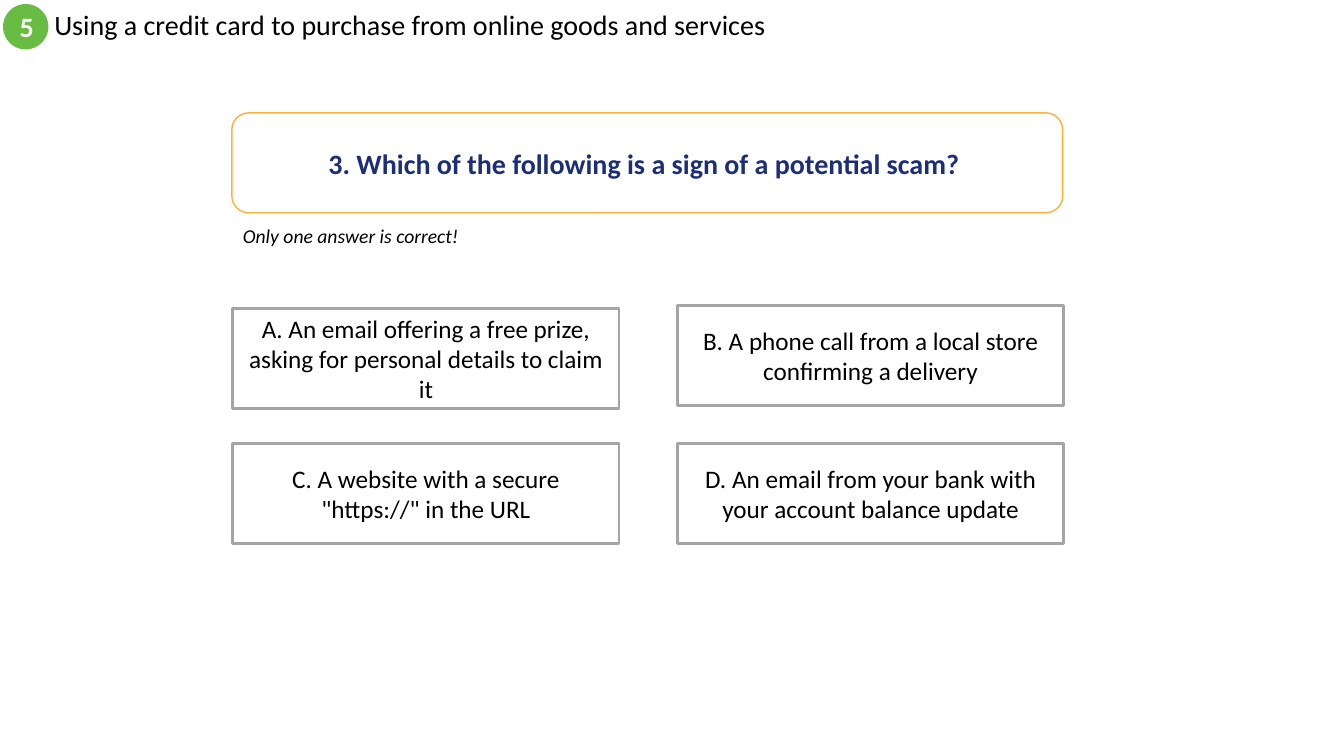
from dataclasses import dataclass

from pptx import Presentation
from pptx import util as u
from pptx.dml.color import RGBColor
from pptx.enum import shapes, text

COLUMNS, ROWS = 1333, 750
CELL = u.Inches(0.01)


@dataclass(frozen=True)
class Theme:
    font: str = "Calibri"
    ink: str = "000000"
    paper: str = "FFFFFF"
    badge: str = "68BC42"
    question: str = "1C2E78"
    question_line: str = "FCB13A"
    answer_line: str = "A5A5A5"
    heading_size: int = 20
    answer_size: int = 18
    hint_size: int = 14


class QuizSlide:
    """Places elements given as (column, row, columns wide, rows high)."""

    def __init__(self, deck, theme):
        self.theme = theme
        self.page = deck.slides.add_slide(deck.slide_layouts[6])

    def set_words(self, box, words, size, color, align, anchor, spacing=None, **styles):
        frame = box.text_frame
        frame.word_wrap = True
        frame.vertical_anchor = anchor
        para = frame.paragraphs[0]
        para.alignment = align
        para.line_spacing = spacing
        span = para.add_run()
        span.text = words
        values = {"name": self.theme.font, "size": u.Pt(size), **styles}
        for name, value in values.items():
            setattr(span.font, name, value)
        span.font.color.rgb = RGBColor.from_string(color)

    def label(self, area, words, size, anchor=text.MSO_ANCHOR.TOP, **styles):
        box = self.page.shapes.add_textbox(*(CELL * cells for cells in area))
        self.set_words(box, words, size, self.theme.ink, text.PP_ALIGN.LEFT,
                       anchor, **styles)

    def panel(self, kind, area, words, size, color, fill, line=None, weight=1, **styles):
        box = self.page.shapes.add_shape(kind, *(CELL * cells for cells in area))
        box.shadow.inherit = False
        box.fill.solid()
        box.fill.fore_color.rgb = RGBColor.from_string(fill)
        if line:
            box.line.color.rgb = RGBColor.from_string(line)
            box.line.width = u.Pt(weight)
        else:
            box.line.fill.background()
        self.set_words(box, words, size, color, text.PP_ALIGN.CENTER,
                       text.MSO_ANCHOR.MIDDLE, **styles)

    def answer(self, area, words):
        theme = self.theme
        self.panel(shapes.MSO_SHAPE.RECTANGLE, area, words, theme.answer_size,
                   theme.ink, theme.paper, theme.answer_line, 2)


def main():
    deck = Presentation()
    deck.slide_width, deck.slide_height = CELL * COLUMNS, CELL * ROWS
    theme = Theme()
    quiz = QuizSlide(deck, theme)

    quiz.label((44, 4, 800, 45),
               "Using a credit card to purchase from online goods and services",
               theme.heading_size, text.MSO_ANCHOR.MIDDLE, spacing=0.9)
    quiz.panel(shapes.MSO_SHAPE.OVAL, (3, 4, 45, 45), "5", theme.heading_size,
               theme.paper, theme.badge, bold=True)
    quiz.panel(shapes.MSO_SHAPE.ROUNDED_RECTANGLE, (230, 112, 824, 99),
               "3. Which of the following is a sign of a potential scam? ",
               theme.heading_size, theme.question, theme.paper,
               theme.question_line, bold=True)
    quiz.label((231, 217, 236, 34), "Only one answer is correct!",
               theme.hint_size, italic=True)

    left, right, bottom = 231, 672, 440
    answers = [
        (left, 306, "A. An email offering a free prize, asking for personal details to claim it"),
        (right, 303, "B. A phone call from a local store confirming a delivery"),
        (left, bottom, 'C. A website with a secure "https://" in the URL'),
        (right, bottom, "D. An email from your bank with your account balance update"),
    ]
    for column, row, words in answers:
        quiz.answer((column, row, 383, 99), words)

    deck.save("out.pptx")


if __name__ == "__main__":
    main()
